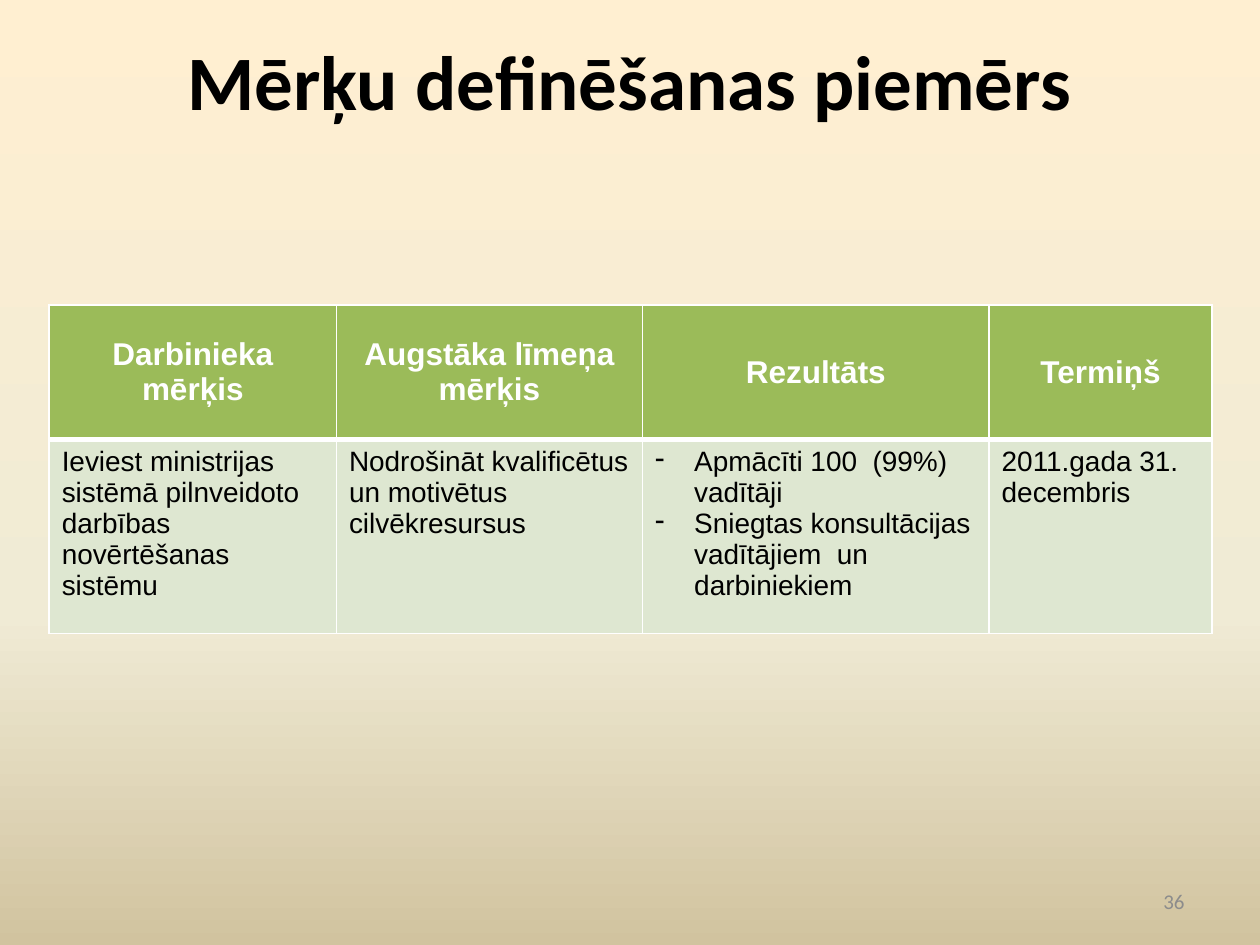
from dataclasses import dataclass

from lxml import etree
from pptx import Presentation
from pptx import util as u
from pptx.dml.color import RGBColor
from pptx.enum import text
from pptx.oxml.ns import qn

WIDTH, HEIGHT = 10, 7.5
COLORS = {
    "black": "000000", "white": "FFFFFF", "grey": "8C8C8C",
    "header": "9BBB59", "body": "DEE7D1",
}
BACKGROUND_STOPS = [(0, "FFEFD1"), (65, "F0EBD5"), (100, "D1C39F")]
TABLE_LEFT, TABLE_TOP = 0.39, 2.42
COLUMN_WIDTHS = [2.28, 2.43, 2.75, 1.77]
ROW_HEIGHTS = [1.07, 1.54]
BULLET_INDENT = 0.31
MIDDLE = text.MSO_ANCHOR.MIDDLE
LEFT, CENTER, RIGHT = text.PP_ALIGN.LEFT, text.PP_ALIGN.CENTER, text.PP_ALIGN.RIGHT


@dataclass
class Style:
    size: float
    name: str
    color: str
    bold: bool = False
    align: text.PP_ALIGN = LEFT


@dataclass
class Row:
    cells: list[list[str]]  # one list of paragraphs per cell
    style: Style
    fill: str
    anchor: text.MSO_ANCHOR
    borders: dict[str, float]  # side -> width in points


@dataclass
class Label:
    """A text box placed by shares of the slide's size."""
    words: str
    left: float
    top: float
    width: float
    height: float
    style: Style


ROWS = [
    Row([["Darbinieka mērķis"], ["Augstāka līmeņa mērķis"], ["Rezultāts"], ["Termiņš"]],
        Style(18, "Arial", "white", True, CENTER), "header", MIDDLE,
        {"L": 1, "R": 1, "T": 1, "B": 3}),
    Row([["Ieviest ministrijas sistēmā pilnveidoto darbības novērtēšanas sistēmu"],
         ["Nodrošināt kvalificētus un motivētus cilvēkresursus"],
         ["Apmācīti 100  (99%) vadītāji",
          "Sniegtas konsultācijas vadītājiem  un darbiniekiem"],
         ["2011.gada 31. decembris"]],
        Style(16, "Arial", "black"), "body", text.MSO_ANCHOR.TOP,
        {"L": 1, "R": 1, "T": 3, "B": 1}),
]
LABELS = [
    Label("Mērķu definēšanas piemērs", 0.05, 0.17 / HEIGHT, 0.9, 0.92 / HEIGHT,
          Style(44, "Calibri", "black", True, CENTER)),
    Label("36", 0.717, 6.95 / HEIGHT, 0.233, 0.4 / HEIGHT,
          Style(12, "Calibri", "grey", align=RIGHT)),
]


def rgb(name: str) -> RGBColor:
    return RGBColor.from_string(COLORS[name])


def add_solid(parent, tag: str, color: str, **attributes: str) -> None:
    """Append an element holding a solid colour, such as a cell border."""
    el = etree.SubElement(parent, qn(tag), attributes)
    fill = etree.SubElement(el, qn("a:solidFill"))
    etree.SubElement(fill, qn("a:srgbClr"), val=color)


def paint_background(s) -> None:
    fill = s.background.fill
    fill.gradient()
    fill.gradient_angle = 270
    stops = next(s.element.iter(qn("a:gsLst")))
    for old in list(stops):
        stops.remove(old)
    for share, color in BACKGROUND_STOPS:
        stop = etree.SubElement(stops, qn("a:gs"), pos=str(share * 1000))
        etree.SubElement(stop, qn("a:srgbClr"), val=color)


def write(tf, paragraphs: list[str], style: Style) -> None:
    for i, words in enumerate(paragraphs):
        p = tf.paragraphs[0] if i == 0 else tf.add_paragraph()
        p.alignment = style.align
        r = p.add_run()
        r.text = words
        formats = {"size": u.Pt(style.size), "name": style.name, "bold": style.bold}
        for key, value in formats.items():
            setattr(r.font, key, value)
        r.font.color.rgb = rgb(style.color)
        if len(paragraphs) > 1:
            add_dash(p)


def add_dash(p) -> None:
    pPr = p._p.get_or_add_pPr()
    indent = u.Inches(BULLET_INDENT)
    pPr.set("marL", str(indent))
    pPr.set("indent", str(-indent))
    etree.SubElement(pPr, qn("a:buChar"), char="-")


def draw_label(s, label: Label) -> None:
    sp = s.shapes.add_textbox(
        u.Inches(label.left * WIDTH), u.Inches(label.top * HEIGHT),
        u.Inches(label.width * WIDTH), u.Inches(label.height * HEIGHT))
    tf = sp.text_frame
    tf.word_wrap = True
    tf.vertical_anchor = MIDDLE
    write(tf, [label.words], label.style)


def draw_table(s, rows: list[Row]) -> None:
    table = s.shapes.add_table(
        len(rows), len(COLUMN_WIDTHS), u.Inches(TABLE_LEFT), u.Inches(TABLE_TOP),
        u.Inches(sum(COLUMN_WIDTHS)), u.Inches(sum(ROW_HEIGHTS))).table
    for column, width in zip(table.columns, COLUMN_WIDTHS):
        column.width = u.Inches(width)
    for table_row, height, row in zip(table.rows, ROW_HEIGHTS, rows):
        table_row.height = u.Inches(height)
        for cell, paragraphs in zip(table_row.cells, row.cells):
            cell.vertical_anchor = row.anchor
            tcPr = cell._tc.get_or_add_tcPr()
            for side, width in row.borders.items():
                add_solid(tcPr, f"a:ln{side}", COLORS["white"], w=str(u.Pt(width)))
            cell.fill.solid()
            cell.fill.fore_color.rgb = rgb(row.fill)
            write(cell.text_frame, paragraphs, row.style)


def main() -> None:
    prs = Presentation()
    prs.slide_width, prs.slide_height = u.Inches(WIDTH), u.Inches(HEIGHT)
    s = prs.slides.add_slide(prs.slide_layouts[6])
    paint_background(s)
    draw_table(s, ROWS)
    for label in LABELS:
        draw_label(s, label)
    prs.save("out.pptx")


if __name__ == "__main__":
    main()
